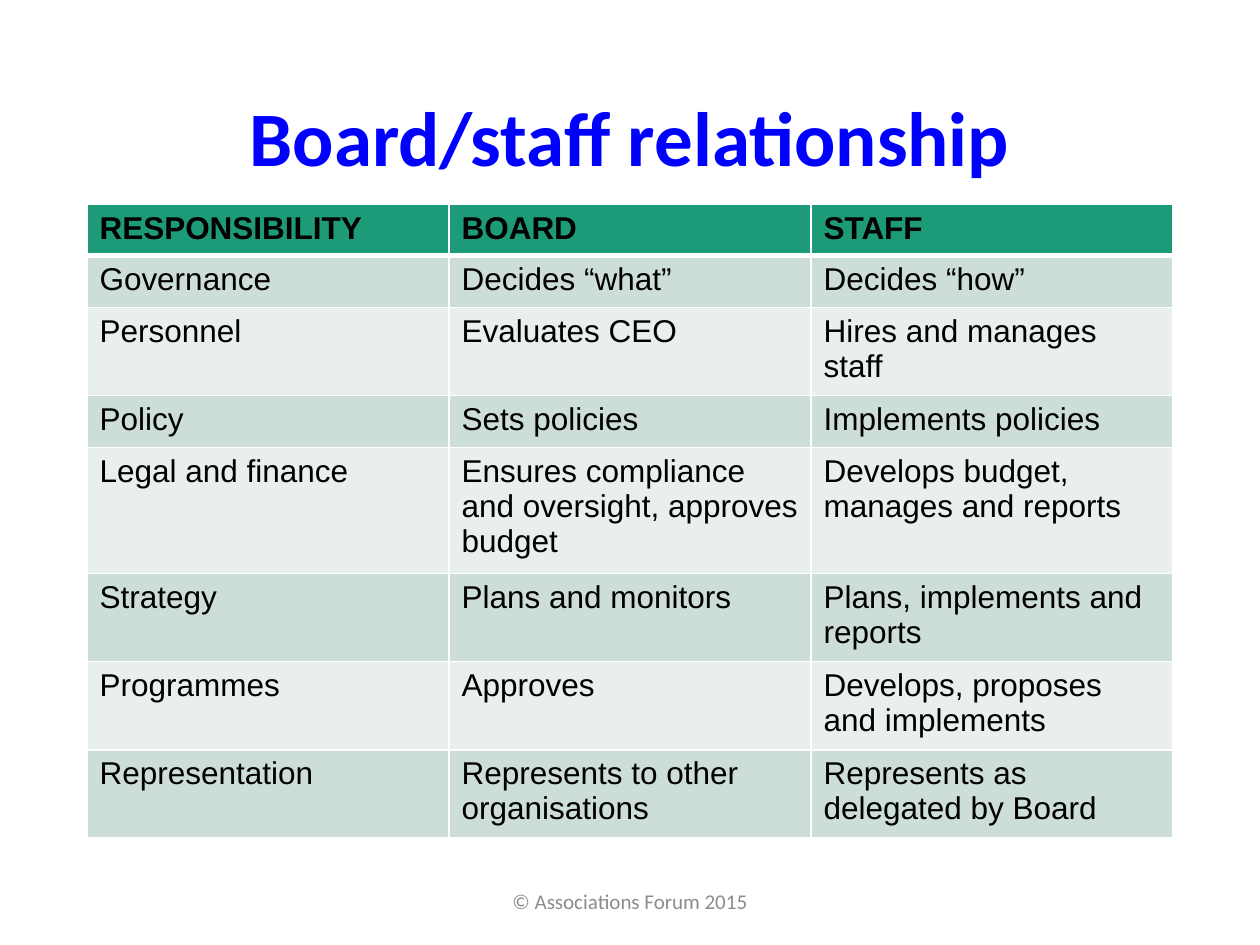
from typing import NamedTuple

from lxml import etree
from pptx import Presentation
from pptx.dml.color import RGBColor
from pptx.enum.text import MSO_ANCHOR, PP_ALIGN
from pptx.oxml.ns import qn
from pptx.util import Inches, Pt

CENTER = PP_ALIGN.CENTER
LEFT = PP_ALIGN.LEFT
MIDDLE = MSO_ANCHOR.MIDDLE

WHITE = "FFFFFF"
HEADER_FILL = "1D9A78"
BAND_FILLS = ("CDDED6", "E8EFEC")
HEADER_BORDERS = {"a:lnL": 1, "a:lnR": 1, "a:lnT": 1, "a:lnB": 3}


class Responsibility(NamedTuple):
    area: str
    board: str
    staff: str


HEADER = Responsibility("RESPONSIBILITY", "BOARD", "STAFF")
RESPONSIBILITIES = (
    Responsibility("Governance", "Decides “what”", "Decides “how”"),
    Responsibility("Personnel", "Evaluates CEO", "Hires and manages staff"),
    Responsibility("Policy", "Sets policies", "Implements policies"),
    Responsibility(
        "Legal and finance",
        "Ensures compliance and oversight, approves budget",
        "Develops budget, manages and reports",
    ),
    Responsibility("Strategy", "Plans and monitors", "Plans, implements and reports"),
    Responsibility("Programmes", "Approves", "Develops, proposes and implements"),
    Responsibility(
        "Representation",
        "Represents to other organisations",
        "Represents as delegated by Board",
    ),
)


def color(value: str) -> RGBColor:
    return RGBColor.from_string(value)


def write_text(text_frame, text: str, *, size: float, font: str = "Arial",
               fill: str = "000000", bold: bool = False, align=LEFT,
               line_spacing: float = 1.0) -> None:
    paragraph = text_frame.paragraphs[0]
    paragraph.alignment = align
    paragraph.line_spacing = line_spacing
    run = paragraph.add_run()
    run.text = text
    run.font.size = Pt(size)
    run.font.name = font
    run.font.bold = bold
    run.font.color.rgb = color(fill)


def add_label(slide, text: str, left: float, top: float, width: float,
              height: float, **text_format) -> None:
    shape = slide.shapes.add_textbox(
        Inches(left), Inches(top), Inches(width), Inches(height))
    shape.text_frame.word_wrap = True
    shape.text_frame.vertical_anchor = MIDDLE
    write_text(shape.text_frame, text, align=CENTER, font="Calibri", **text_format)


def set_header_borders(cell) -> None:
    properties = cell._tc.get_or_add_tcPr()
    for tag, width in HEADER_BORDERS.items():
        line = etree.SubElement(properties, qn(tag), w=str(Pt(width)))
        solid_fill = etree.SubElement(line, qn("a:solidFill"))
        etree.SubElement(solid_fill, qn("a:srgbClr"), val=WHITE)


def fill_row(cells, entry: Responsibility, fill: str, is_header: bool) -> None:
    for cell, text in zip(cells, entry):
        if is_header:
            set_header_borders(cell)
        cell.fill.solid()
        cell.fill.fore_color.rgb = color(fill)
        write_text(cell.text_frame, text, size=18, bold=is_header)


def add_responsibility_table(slide) -> None:
    entries = (HEADER, *RESPONSIBILITIES)
    row_height = Inches(0.41)
    frame = slide.shapes.add_table(
        len(entries), len(HEADER), Inches(0.69), Inches(1.62),
        Inches(8.62), row_height * len(entries))
    table = frame.table
    for row in table.rows:
        row.height = row_height
    for index, (row, entry) in enumerate(zip(table.rows, entries)):
        is_header = index == 0
        fill = HEADER_FILL if is_header else BAND_FILLS[(index - 1) % 2]
        fill_row(row.cells, entry, fill, is_header)


def main() -> None:
    presentation = Presentation()
    presentation.slide_width = Inches(10)
    presentation.slide_height = Inches(7.5)
    slide = presentation.slides.add_slide(presentation.slide_layouts[6])
    add_label(slide, "Board/staff relationship", 0.69, 0.4, 8.62, 1.45,
              size=44, fill="0000FF", bold=True, line_spacing=0.9)
    add_responsibility_table(slide)
    add_label(slide, "© Associations Forum 2015", 3.31, 6.95, 3.38, 0.4,
              size=12, fill="8C8C8C")
    presentation.save("out.pptx")


if __name__ == "__main__":
    main()
